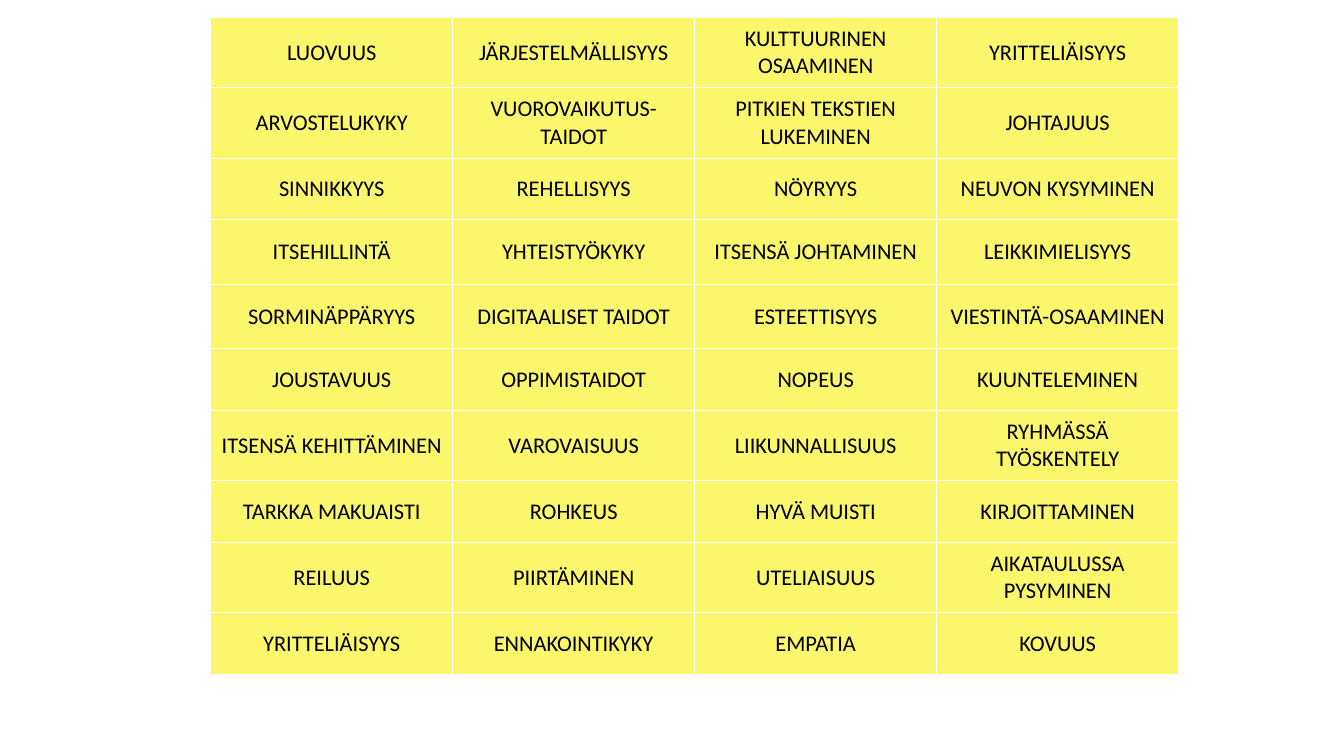
from dataclasses import dataclass

from lxml.etree import SubElement
from pptx import Presentation
from pptx.dml.color import RGBColor
from pptx.enum.text import MSO_ANCHOR as Anchor, PP_ALIGN as Align
from pptx.oxml.ns import qn
from pptx.util import Emu, Inches, Pt

GRID = 0.1
LEFT, TOP, COLUMN = 20.9, 1.7, 24
YELLOW, WHITE, BLACK = "FAF76C", "FFFFFF", "000000"


@dataclass
class SkillRow:
    height: float
    skills: tuple[str, ...]


ROWS = [
    SkillRow(7, ("LUOVUUS", "JÄRJESTELMÄLLISYYS", "KULTTUURINEN OSAAMINEN", "YRITTELIÄISYYS")),
    SkillRow(7, ("ARVOSTELUKYKY", "VUOROVAIKUTUS-TAIDOT", "PITKIEN TEKSTIEN LUKEMINEN", "JOHTAJUUS")),
    SkillRow(6.1, ("SINNIKKYYS", "REHELLISYYS", "NÖYRYYS", "NEUVON KYSYMINEN")),
    SkillRow(6.4, ("ITSEHILLINTÄ", "YHTEISTYÖKYKY", "ITSENSÄ JOHTAMINEN", "LEIKKIMIELISYYS")),
    SkillRow(6.4, ("SORMINÄPPÄRYYS", "DIGITAALISET TAIDOT", "ESTEETTISYYS", "VIESTINTÄ-OSAAMINEN")),
    SkillRow(6.1, ("JOUSTAVUUS", "OPPIMISTAIDOT", "NOPEUS", "KUUNTELEMINEN")),
    SkillRow(7, ("ITSENSÄ KEHITTÄMINEN", "VAROVAISUUS", "LIIKUNNALLISUUS", "RYHMÄSSÄ TYÖSKENTELY")),
    SkillRow(6.1, ("TARKKA MAKUAISTI", "ROHKEUS", "HYVÄ MUISTI", "KIRJOITTAMINEN")),
    SkillRow(7, ("REILUUS", "PIIRTÄMINEN", "UTELIAISUUS", "AIKATAULUSSA PYSYMINEN")),
    SkillRow(6.1, ("YRITTELIÄISYYS", "ENNAKOINTIKYKY", "EMPATIA", "KOVUUS")),
]


def units(count: float) -> Emu:
    return Inches(count * GRID)


def color(value: str) -> RGBColor:
    return RGBColor.from_string(value)


def add_borders(cell, value: str, width: float) -> None:
    tc_pr = cell._tc.get_or_add_tcPr()
    for side in ("a:lnL", "a:lnR", "a:lnT", "a:lnB"):
        ln = SubElement(tc_pr, qn(side), w=str(Pt(width)))
        fill = SubElement(ln, qn("a:solidFill"))
        SubElement(fill, qn("a:srgbClr"), val=value)


def fill_cell(cell, skill: str) -> None:
    add_borders(cell, WHITE, 1)
    cell.fill.solid()
    cell.fill.fore_color.rgb = color(YELLOW)
    cell.vertical_anchor = Anchor.MIDDLE
    cell.text_frame.text = skill
    p = cell.text_frame.paragraphs[0]
    p.alignment = Align.CENTER
    r = p.runs[0]
    r.font.name = "Calibri"
    r.font.size = Pt(16)
    r.font.bold = False
    r.font.color.rgb = color(BLACK)


def add_skills(s, rows: list[SkillRow]) -> None:
    columns = len(rows[0].skills)
    height = sum(row.height for row in rows)
    frame = s.shapes.add_table(len(rows), columns, units(LEFT), units(TOP),
                               units(columns * COLUMN), units(height))
    table = frame.table
    table.first_row = False
    table.horz_banding = False
    for column in table.columns:
        column.width = units(COLUMN)
    for i, row in enumerate(rows):
        table.rows[i].height = units(row.height)
        for j, skill in enumerate(row.skills):
            fill_cell(table.cell(i, j), skill)


def main() -> None:
    prs = Presentation()
    prs.slide_width, prs.slide_height = Inches(13.33), Inches(7.5)
    s = prs.slides.add_slide(prs.slide_layouts[6])
    add_skills(s, ROWS)
    prs.save("out.pptx")


if __name__ == "__main__":
    main()
